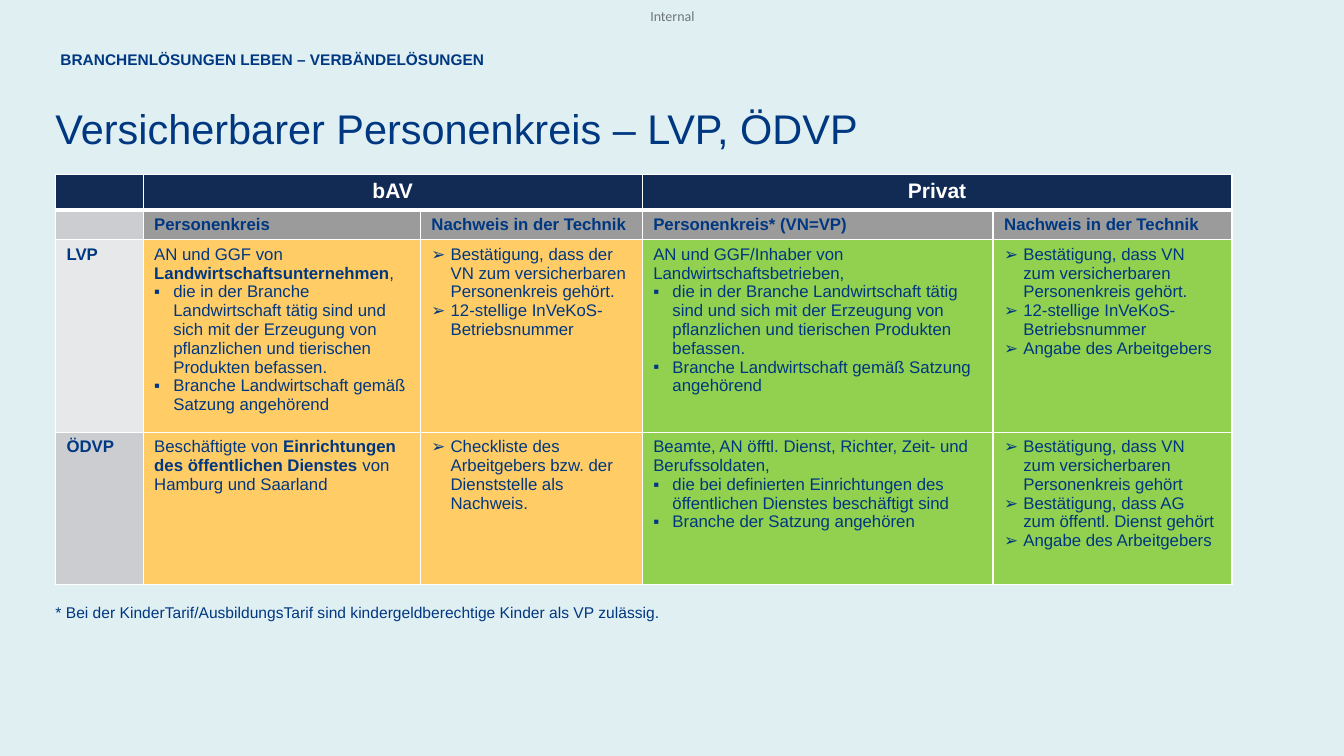
from lxml import etree
from pptx import Presentation
from pptx import util as u
from pptx.dml.color import RGBColor
from pptx.enum import text as t
from pptx.oxml import ns

NAVY = RGBColor(0x00, 0x37, 0x81)
DARK = RGBColor(0x12, 0x2B, 0x54)
WHITE = RGBColor(0xFF, 0xFF, 0xFF)
BLACK = RGBColor(0, 0, 0)
PALE = RGBColor(0xDF, 0xEF, 0xF2)
GREY = RGBColor(0x9B, 0x9B, 0x9B)
SILVER = RGBColor(0xCC, 0xCD, 0xD1)
LIGHT = RGBColor(0xE7, 0xE8, 0xE9)
AMBER = RGBColor(0xFF, 0xCC, 0x66)
GREEN = RGBColor(0x92, 0xD0, 0x50)

COLS = [0.87, 2.75, 2.2, 3.48, 2.37]
ROWS = [0.35, 0.3, 1.91, 1.51]
BODY = [AMBER, AMBER, GREEN, GREEN]
FILLS = [[DARK] * 5, [SILVER] + [GREY] * 4, [LIGHT] + BODY, [SILVER] + BODY]
PROOF = "Nachweis in der Technik"
FARM = ("▪die in der Branche Landwirtschaft tätig sind und sich mit der Erzeugung "
        "von pflanzlichen und tierischen Produkten befassen.")
CHARTER = "▪Branche Landwirtschaft gemäß Satzung angehörend"
NUMBER = "➢12-stellige InVeKoS-Betriebsnummer"
BOSS = "➢Angabe des Arbeitgebers"
CELLS = [
    [[""], ["bAV"], [""], ["Privat"], [""]],
    [[""], ["Personenkreis"], [PROOF], ["Personenkreis* (VN=VP)"], [PROOF]],
    [["LVP"],
     ["AN und GGF von **Landwirtschaftsunternehmen**,", FARM, CHARTER],
     ["➢Bestätigung, dass der VN zum versicherbaren Personenkreis gehört.", NUMBER],
     ["AN und GGF/Inhaber von Landwirtschaftsbetrieben,", FARM, CHARTER],
     ["➢Bestätigung, dass VN zum versicherbaren Personenkreis gehört.", NUMBER, BOSS]],
    [["ÖDVP"],
     ["Beschäftigte von **Einrichtungen des öffentlichen Dienstes **von Hamburg und Saarland"],
     ["➢Checkliste des Arbeitgebers bzw. der Dienststelle als Nachweis."],
     ["Beamte, AN öfftl. Dienst, Richter, Zeit- und Berufssoldaten,",
      "▪die bei definierten Einrichtungen des öffentlichen Dienstes beschäftigt sind",
      "▪Branche der Satzung angehören"],
     ["➢Bestätigung, dass VN zum versicherbaren Personenkreis gehört",
      "➢Bestätigung, dass AG zum öffentl. Dienst gehört", BOSS]],
]


def style(para, size, color, bold=False, face="Arial"):
    font = para.font
    font.name, font.size, font.bold = face, u.Pt(size), bold
    font.color.rgb = color


def place(shape, box, words, size, color=NAVY, bold=False, face="Arial",
          anchor=t.MSO_ANCHOR.TOP, wrap=True):
    shape.left, shape.top, shape.width, shape.height = map(u.Inches, box)
    frame = shape.text_frame
    frame.margin_left = frame.margin_right = frame.margin_top = frame.margin_bottom = 0
    frame.word_wrap, frame.vertical_anchor = wrap, anchor
    frame.auto_size = t.MSO_AUTO_SIZE.NONE
    para = frame.paragraphs[0]
    para.text, para.alignment = words, t.PP_ALIGN.LEFT
    style(para, size, color, bold, face)
    return para


def label(slide, box, *args, **opts):
    return place(slide.shapes.add_textbox(0, 0, 0, 0), box, *args, **opts)


def border(cell, row):
    props = cell._tc.get_or_add_tcPr()
    for side in "LRTB":
        thick = (row, side) in [(0, "B"), (1, "T")]
        line = etree.SubElement(props, ns.qn(f"a:ln{side}"), w=str(u.Pt(3 if thick else 1)))
        paint = etree.SubElement(line, ns.qn("a:solidFill"))
        etree.SubElement(paint, ns.qn("a:srgbClr"), val=str(WHITE))


def write(para, words, size, color, bold):
    if words[:1] in ("▪", "➢"):
        props = para._p.get_or_add_pPr()
        indent = u.Inches(0.19)
        props.set("marL", str(indent))
        props.set("indent", str(-indent))
        etree.SubElement(props, ns.qn("a:buFont"), typeface="Arial")
        etree.SubElement(props, ns.qn("a:buChar"), char=words[0])
        words = words[1:]
    style(para, size, color, bold)
    for i, part in enumerate(words.split("**")):
        if part:
            run = para.add_run()
            run.text = part
            if i % 2:
                run.font.bold = True
    if not words:
        etree.SubElement(para._p, ns.qn("a:endParaRPr"), sz=str(size * 100))


def fill_cell(cell, row, col):
    border(cell, row)
    cell.fill.solid()
    cell.fill.fore_color.rgb = FILLS[row][col]
    cell.margin_left = cell.margin_right = u.Inches(0.11)
    cell.margin_top = cell.margin_bottom = u.Inches(0.05)
    cell.vertical_anchor = t.MSO_ANCHOR.MIDDLE if row == 1 else t.MSO_ANCHOR.TOP
    size, color = (15, WHITE) if row == 0 else (12, NAVY)
    for i, words in enumerate(CELLS[row][col]):
        para = cell.text_frame.add_paragraph() if i else cell.text_frame.paragraphs[0]
        if row == 0:
            para.alignment = t.PP_ALIGN.CENTER
        write(para, words, size, color, row < 2 or col == 0)


def grid(slide, left, top):
    box = map(u.Inches, (left, top, sum(COLS), sum(ROWS)))
    table = slide.shapes.add_table(len(ROWS), len(COLS), *box).table
    table.first_row = table.horz_banding = False
    for col, width in zip(table.columns, COLS):
        col.width = u.Inches(width)
    for row, height in zip(table.rows, ROWS):
        row.height = u.Inches(height)
    for r in range(len(ROWS)):
        for c in range(len(COLS)):
            fill_cell(table.cell(r, c), r, c)
    for c in (1, 3):
        table.cell(0, c).merge(table.cell(0, c + 1))


def header(slide, left):
    mark = label(slide, (6.45, 0.07, 0.47, 0.17), "Internal", 10, BLACK,
                 face="Calibri", wrap=False)
    for tint in mark._p.iter(ns.qn("a:srgbClr")):
        etree.SubElement(tint, ns.qn("a:alpha"), val="50000")
    kicker = label(slide, (left + 0.05, 0.4, 10.2, 0.28),
                   "BRANCHENLÖSUNGEN LEBEN – VERBÄNDELÖSUNGEN", 11, bold=True,
                   anchor=t.MSO_ANCHOR.BOTTOM)
    kicker.line_spacing = 0.9
    place(slide.shapes.title, (left, 1.02, 9.27, 0.75),
          "Versicherbarer Personenkreis – LVP, ÖDVP", 29.6)


def main():
    deck = Presentation()
    deck.slide_width, deck.slide_height = u.Inches(13.33), u.Inches(7.5)
    slide = deck.slides.add_slide(deck.slide_layouts[5])
    slide.background.fill.solid()
    slide.background.fill.fore_color.rgb = PALE
    left = 0.55
    header(slide, left)
    grid(slide, left, 1.73)
    label(slide, (left, 5.98, 11.71, 0.18),
          "* Bei der KinderTarif/AusbildungsTarif sind kindergeldberechtige Kinder "
          "als VP zulässig.", 11.1)
    deck.save("out.pptx")


if __name__ == "__main__":
    main()
